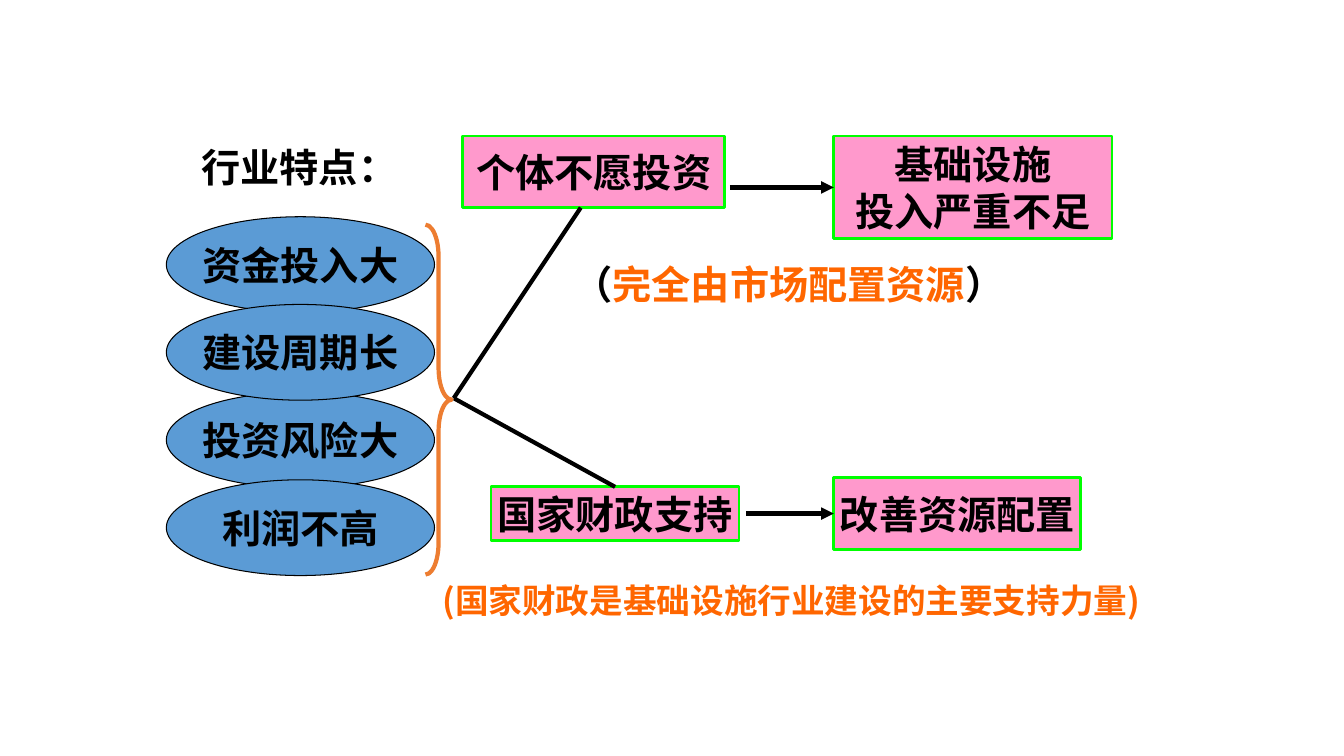
from lxml import etree
from pptx import Presentation
from pptx.dml.color import RGBColor
from pptx.enum.shapes import MSO_CONNECTOR, MSO_SHAPE
from pptx.enum.text import MSO_ANCHOR, PP_ALIGN
from pptx.oxml.ns import qn
from pptx.util import Inches, Pt

RECTANGLE = MSO_SHAPE.RECTANGLE
OVAL = MSO_SHAPE.OVAL
RIGHT_BRACE = MSO_SHAPE.RIGHT_BRACE
STRAIGHT = MSO_CONNECTOR.STRAIGHT
MIDDLE = MSO_ANCHOR.MIDDLE
CENTER = PP_ALIGN.CENTER
LEFT = PP_ALIGN.LEFT

COLORS = {
    "black": "000000",
    "pink": "FF99CC",
    "green": "00FF00",
    "blue": "5B9BD5",
    "brace": "ED7D31",
    "orange": "FF6600",
}
LATIN_FONT = "Cambria"
CHINESE_FONT = "Noto Sans CJK SC"
TOP_SIDE, LEFT_SIDE = 0, 1
FORK = (4.5, 3.95)


def color(name):
    return RGBColor.from_string(COLORS[name])


def style_paragraph(para, align, size=28, font_name=LATIN_FONT, ink="black"):
    para.alignment = align
    font = para.font
    font.name = font_name
    font.size = Pt(size)
    font.bold = True
    font.color.rgb = color(ink)
    defaults = para._p.pPr.find(qn("a:defRPr"))
    etree.SubElement(defaults, qn("a:ea"), typeface=CHINESE_FONT)


def add_node(page, kind, place, lines, fill, line, width):
    node = page.shapes.add_shape(kind, *map(Inches, place))
    node.shadow.inherit = False
    node.fill.solid()
    node.fill.fore_color.rgb = color(fill)
    node.line.color.rgb = color(line)
    node.line.width = Pt(width)
    frame = node.text_frame
    frame.word_wrap = False
    frame.vertical_anchor = MIDDLE
    for index, text in enumerate(lines):
        para = frame.add_paragraph() if index else frame.paragraphs[0]
        para.add_run().text = text
        style_paragraph(para, CENTER)
    return node


def add_box(page, place, *lines):
    return add_node(page, RECTANGLE, place, lines, "pink", "green", 2)


def add_trait(page, top, text):
    add_node(page, OVAL, (1.65, top, 2.66, 0.95), [text], "blue", "black", 0.75)


def add_brace(page, place):
    brace = page.shapes.add_shape(RIGHT_BRACE, *map(Inches, place))
    brace.adjustments[0] = 1.21
    brace.shadow.inherit = False
    brace.fill.background()
    brace.line.color.rgb = color("brace")
    brace.line.width = Pt(3)


def add_label(page, place, spans, **style):
    box = page.shapes.add_textbox(*map(Inches, place))
    box.text_frame.word_wrap = True
    para = box.text_frame.paragraphs[0]
    for text, ink in spans:
        span = para.add_run()
        span.text = text
        if ink:
            span.font.color.rgb = color(ink)
    style_paragraph(para, LEFT, **style)


def add_line(page, start_x, start_y, end_x, end_y):
    line = page.shapes.add_connector(STRAIGHT, start_x, start_y, end_x, end_y)
    line.line.color.rgb = color("black")
    line.line.width = Pt(3)
    etree.SubElement(line._element.spPr, qn("a:effectLst"))
    return line


def add_branch(page, end_x, end_y):
    return add_line(page, *map(Inches, (*FORK, end_x, end_y)))


def add_arrow(page, start_x, target):
    middle = target.top + target.height // 2
    arrow = add_line(page, Inches(start_x), middle, target.left, middle)
    arrow.end_connect(target, LEFT_SIDE)
    etree.SubElement(arrow.line._get_or_add_ln(), qn("a:tailEnd"), type="triangle")


def main():
    deck = Presentation()
    deck.slide_width = Inches(13.33)
    deck.slide_height = Inches(7.5)
    page = deck.slides.add_slide(deck.slide_layouts[6])

    add_box(page, (4.59, 1.35, 2.6, 0.71), "个体不愿投资")
    add_branch(page, 5.76, 2.06)
    add_label(page, (5.59, 2.53, 6.06, 0.57),
              [("（", None), ("完全由市场配置资源", "orange"), ("）", None)])
    shortage = add_box(page, (8.27, 1.35, 2.76, 1.02), "基础设施", "投入严重不足")
    add_arrow(page, 7.24, shortage)

    support = add_box(page, (4.87, 4.83, 2.46, 0.53), "国家财政支持")
    add_branch(page, 6.1, 4.83).end_connect(support, TOP_SIDE)
    improvement = add_box(page, (8.27, 4.74, 2.45, 0.71), "改善资源配置")
    add_arrow(page, 7.4, improvement)
    add_label(page, (4.29, 5.7, 7.36, 1.21),
              [("(国家财政是基础设施行业建设的主要支持力量)", None)],
              size=24, font_name=CHINESE_FONT, ink="orange")

    traits = [(2, "投资风险大"), (0, "资金投入大"), (1, "建设周期长"), (3, "利润不高")]
    for row, text in traits:
        add_trait(page, 2.15 + 0.87 * row, text)
    add_brace(page, (4.22, 2.23, 0.26, 3.47))
    add_label(page, (1.9, 1.37, 2.49, 0.57), [("行业特点：", None)])

    deck.save("out.pptx")


if __name__ == "__main__":
    main()
